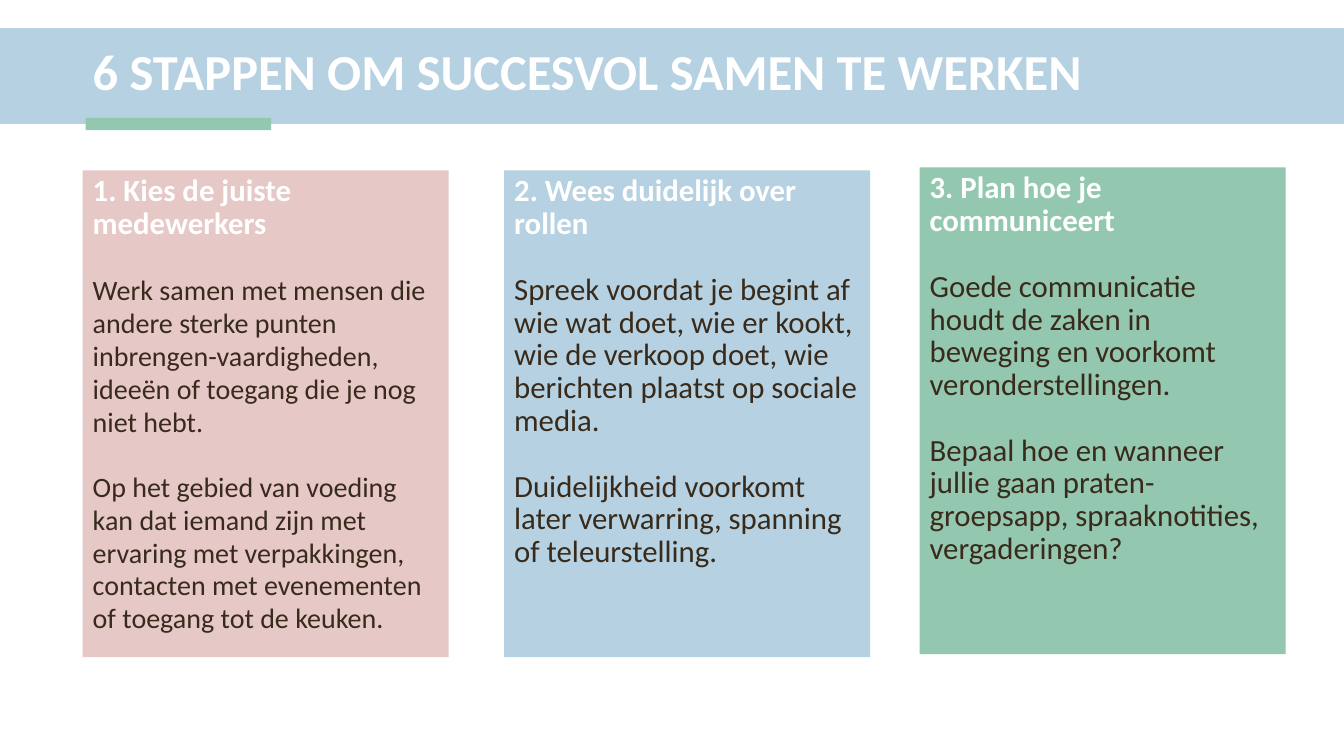
from dataclasses import dataclass

from lxml.etree import SubElement
from pptx import Presentation
from pptx.dml.color import RGBColor
from pptx.enum.shapes import MSO_SHAPE
from pptx.enum.text import MSO_ANCHOR, MSO_AUTO_SIZE, PP_ALIGN
from pptx.oxml.ns import qn
from pptx.util import Inches, Pt

WHITE = RGBColor(0xFF, 0xFF, 0xFF)
BROWN = RGBColor(0x38, 0x2B, 0x1B)
PINK = RGBColor(0xE6, 0xC8, 0xC7)
BLUE = RGBColor(0xB6, 0xD1, 0xE1)
GREEN = RGBColor(0x94, 0xC7, 0xB0)
W, H = Inches(13.33), Inches(7.5)
LEADING = Pt(23.4)


@dataclass
class Box:
    """Shares of the slide's size, in percent."""
    x: float
    y: float
    w: float
    h: float


@dataclass
class Card:
    box: Box
    fill: RGBColor
    heading: str
    body: list[str]
    size: int = 22


CARD_W, CARD_H = 27.23, 64.4
BANNER = Box(0, 3.73, 100, 12.67)
ACCENT = Box(6.38, 15.6, 13.8, 1.6)
TITLE = Box(6.15, 4.53, 89.5, 10.53)
CARDS = [
    Card(Box(6.15, 22.53, CARD_W, CARD_H), PINK, "1. Kies de juiste medewerkers", [
        "Werk samen met mensen die andere sterke punten inbrengen-vaardigheden, "
        "ideeën of toegang die je nog niet hebt.",
        "Op het gebied van voeding kan dat iemand zijn met ervaring met verpakkingen, "
        "contacten met evenementen of toegang tot de keuken.",
    ], size=20),
    Card(Box(37.51, 22.53, CARD_W, CARD_H), BLUE, "2. Wees duidelijk over rollen", [
        "Spreek voordat je begint af wie wat doet, wie er kookt, wie de verkoop doet, "
        "wie berichten plaatst op sociale media.",
        "Duidelijkheid voorkomt later verwarring, spanning of teleurstelling.",
    ]),
    Card(Box(68.42, 22.13, CARD_W, CARD_H), GREEN, "3. Plan hoe je communiceert", [
        "Goede communicatie houdt de zaken in beweging en voorkomt veronderstellingen.",
        "Bepaal hoe en wanneer jullie gaan praten-groepsapp, spraaknotities, "
        "vergaderingen?",
    ]),
]


def place(sp, box: Box) -> None:
    sp.left, sp.top = round(W * box.x / 100), round(H * box.y / 100)
    sp.width, sp.height = round(W * box.w / 100), round(H * box.h / 100)


def paint(sp, color: RGBColor) -> None:
    sp.fill.solid()
    sp.fill.fore_color.rgb = color


def add_bar(s, box: Box, color: RGBColor):
    sp = s.shapes.add_shape(MSO_SHAPE.RECTANGLE, 0, 0, 0, 0)
    place(sp, box)
    paint(sp, color)
    sp.line.fill.background()
    sp.shadow.inherit = False
    return sp


def setup_frame(sp, anchor: MSO_ANCHOR):
    tf = sp.text_frame
    tf.word_wrap = True
    tf.auto_size = MSO_AUTO_SIZE.NONE
    tf.vertical_anchor = anchor
    return tf


def write(p, text: str, *, size: int, color: RGBColor, bold: bool = False,
          leading=LEADING, before=Pt(0)) -> None:
    pPr = p._p.get_or_add_pPr()
    pPr.set("marL", "0")
    pPr.set("indent", "0")
    SubElement(pPr, qn("a:buNone"))
    p.alignment = PP_ALIGN.LEFT
    p.line_spacing = leading
    p.space_before, p.space_after = before, Pt(0)
    r = p.add_run()
    r.text = text
    r.font.name, r.font.size, r.font.bold = "Calibri", Pt(size), bold
    r.font.color.rgb = color


def fill_card(sp, card: Card) -> None:
    place(sp, card.box)
    paint(sp, card.fill)
    tf = setup_frame(sp, MSO_ANCHOR.TOP)
    write(tf.paragraphs[0], card.heading, size=22, color=WHITE, bold=True)
    for text in card.body:
        write(tf.add_paragraph(), text, size=card.size, color=BROWN, before=LEADING)


def main() -> None:
    prs = Presentation()
    prs.slide_width, prs.slide_height = W, H
    s = prs.slides.add_slide(prs.slide_layouts.get_by_name("Comparison"))

    title = s.shapes.title
    for box, color in ((BANNER, BLUE), (ACCENT, GREEN)):
        title.element.addprevious(add_bar(s, box, color).element)
    place(title, TITLE)
    tf = setup_frame(title, MSO_ANCHOR.MIDDLE)
    write(tf.paragraphs[0], "6 STAPPEN OM SUCCESVOL SAMEN TE WERKEN",
          size=36, color=WHITE, bold=True, leading=0.9)

    bodies = [sp for sp in s.placeholders if sp.placeholder_format.idx > 0]
    for sp, card in zip(bodies, CARDS):
        fill_card(sp, card)
    for sp in bodies[len(CARDS):]:
        sp.element.getparent().remove(sp.element)

    prs.save("out.pptx")


if __name__ == "__main__":
    main()
